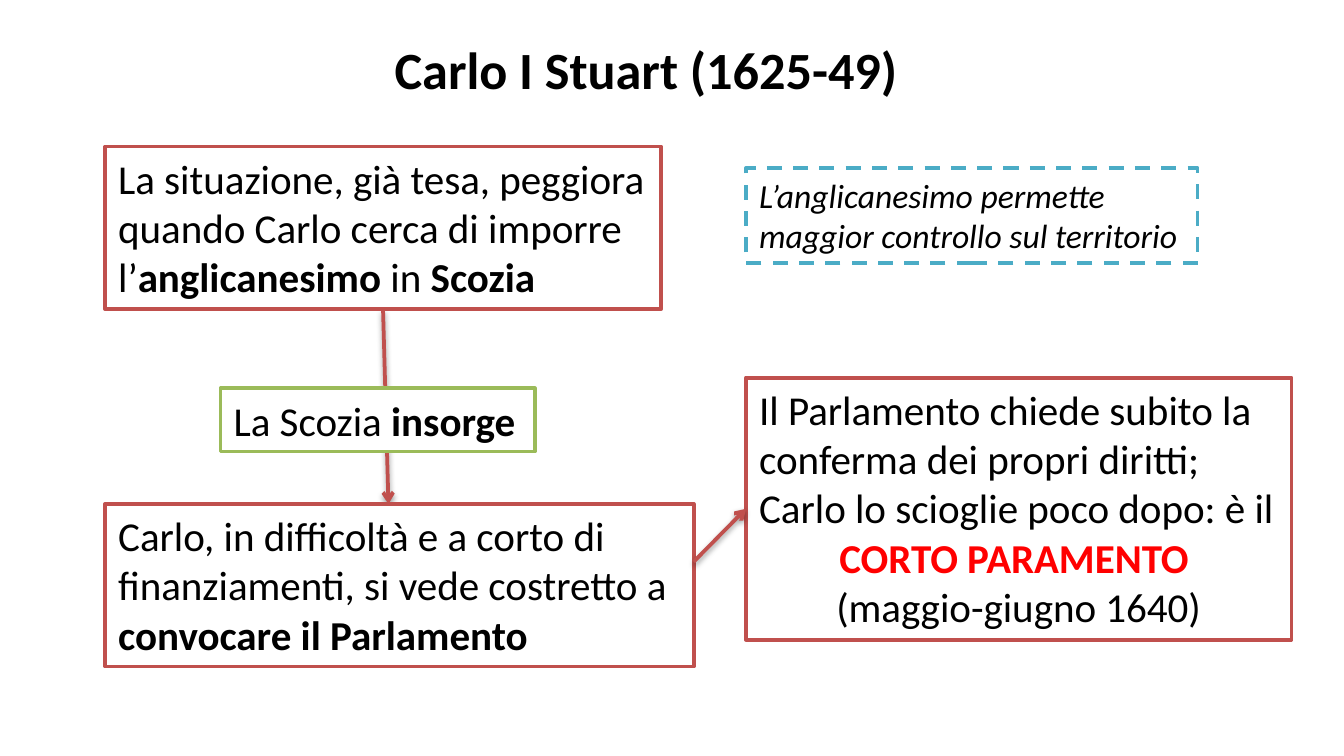
from lxml import etree
from pptx import Presentation
from pptx.dml.color import RGBColor
from pptx.enum.dml import MSO_LINE_DASH_STYLE as DASH
from pptx.enum.shapes import MSO_CONNECTOR, MSO_SHAPE
from pptx.enum.text import MSO_ANCHOR, MSO_AUTO_SIZE, PP_ALIGN
from pptx.oxml import parse_xml
from pptx.oxml.ns import nsdecls, qn
from pptx.util import Pt

RED, GREEN, BLUE = "C0504D", "9BBB59", "4BACC6"
BLACK, WHITE, HIGHLIGHT = "000000", "FFFFFF", "FF0000"
LEFT, RIGHT = 56.2, 399.6
L, C = PP_ALIGN.LEFT, PP_ALIGN.CENTER

TITLE = ((146.2, 16.6, 399.6, 41),
         [(C, BLACK, [("Carlo I Stuart (1625-49)", True)])])

BOXES = [
    dict(at=(LEFT, 78.5, 298, 87.1), line=RED, paras=[
        (L, BLACK, [("La situazione, già tesa, peggiora quando Carlo cerca di imporre l’", False),
                    ("anglicanesimo", True), (" in ", False), ("Scozia", True)])]),
    dict(at=(RIGHT, 90, 242, 51), line=BLUE, dash=DASH.DASH, size=18, italic=True, paras=[
        (L, BLACK, [("L’anglicanesimo permette maggior controllo sul territorio", False)])]),
    dict(at=(118.1, 208.1, 168.5, 33.9), line=GREEN, paras=[
        (L, BLACK, [("La Scozia ", False), ("insorge", True)])]),
    dict(at=(LEFT, 270, 315.4, 87.1), line=RED, paras=[
        (L, BLACK, [("Carlo, in difficoltà e a corto di finanziamenti, si vede costretto a ", False),
                    ("convocare il Parlamento", True)])]),
    dict(at=(RIGHT, 202.3, 292.3, 140.4), line=RED, paras=[
        (L, BLACK, [("Il Parlamento chiede subito la conferma dei propri diritti; "
                     "Carlo lo scioglie poco dopo: è il", False)]),
        (C, HIGHLIGHT, [("CORTO PARAMENTO ", True)]),
        (C, BLACK, [("(maggio-giugno 1640)", False)])]),
]

REVOLT_ARROW = (205.2, 166, 208.1, 270)
PARLIAMENT_ARROW = (371.6, 301, RIGHT, 272.6)

SHADOW = (f'<a:effectLst {nsdecls("a")}><a:outerShdw blurRad="39370" dist="20320" '
          'dir="5400000" rotWithShape="0"><a:srgbClr val="000000"><a:alpha val="38000"/>'
          '</a:srgbClr></a:outerShdw></a:effectLst>')


def rgb(value):
    return RGBColor.from_string(value)


def write(sp, paras, size, italic=False):
    tf = sp.text_frame
    tf.word_wrap = True
    tf.auto_size = MSO_AUTO_SIZE.SHAPE_TO_FIT_TEXT
    tf.vertical_anchor = MSO_ANCHOR.TOP
    for i, (align, color, runs) in enumerate(paras):
        p = tf.add_paragraph() if i else tf.paragraphs[0]
        p.alignment = align
        p.font.name, p.font.size, p.font.italic = "Calibri", Pt(size), italic
        p.font.color.rgb = rgb(color)
        for text, bold in runs:
            r = p.add_run()
            r.text, r.font.bold = text, bold


def add_box(s, at, line, paras, dash=None, size=22, italic=False):
    sp = s.shapes.add_shape(MSO_SHAPE.RECTANGLE, *map(Pt, at))
    sp.shadow.inherit = False
    sp.fill.solid()
    sp.fill.fore_color.rgb = rgb(WHITE)
    sp.line.color.rgb = rgb(line)
    sp.line.width = Pt(2)
    if dash:
        sp.line.dash_style = dash
    write(sp, paras, size, italic)


def add_arrow(s, ends):
    cx = s.shapes.add_connector(MSO_CONNECTOR.STRAIGHT, *map(Pt, ends))
    cx.line.color.rgb = rgb(RED)
    cx.line.width = Pt(2)
    etree.SubElement(cx.line._get_or_add_ln(), qn("a:tailEnd"), type="arrow")
    cx._element.spPr.append(parse_xml(SHADOW))


def main():
    prs = Presentation()
    prs.slide_width, prs.slide_height = Pt(720), Pt(405)
    s = prs.slides.add_slide(prs.slide_layouts[6])
    add_arrow(s, REVOLT_ARROW)
    at, paras = TITLE
    write(s.shapes.add_textbox(*map(Pt, at)), paras, 28)
    for box in BOXES:
        add_box(s, **box)
    add_arrow(s, PARLIAMENT_ARROW)
    prs.save("out.pptx")


if __name__ == "__main__":
    main()
